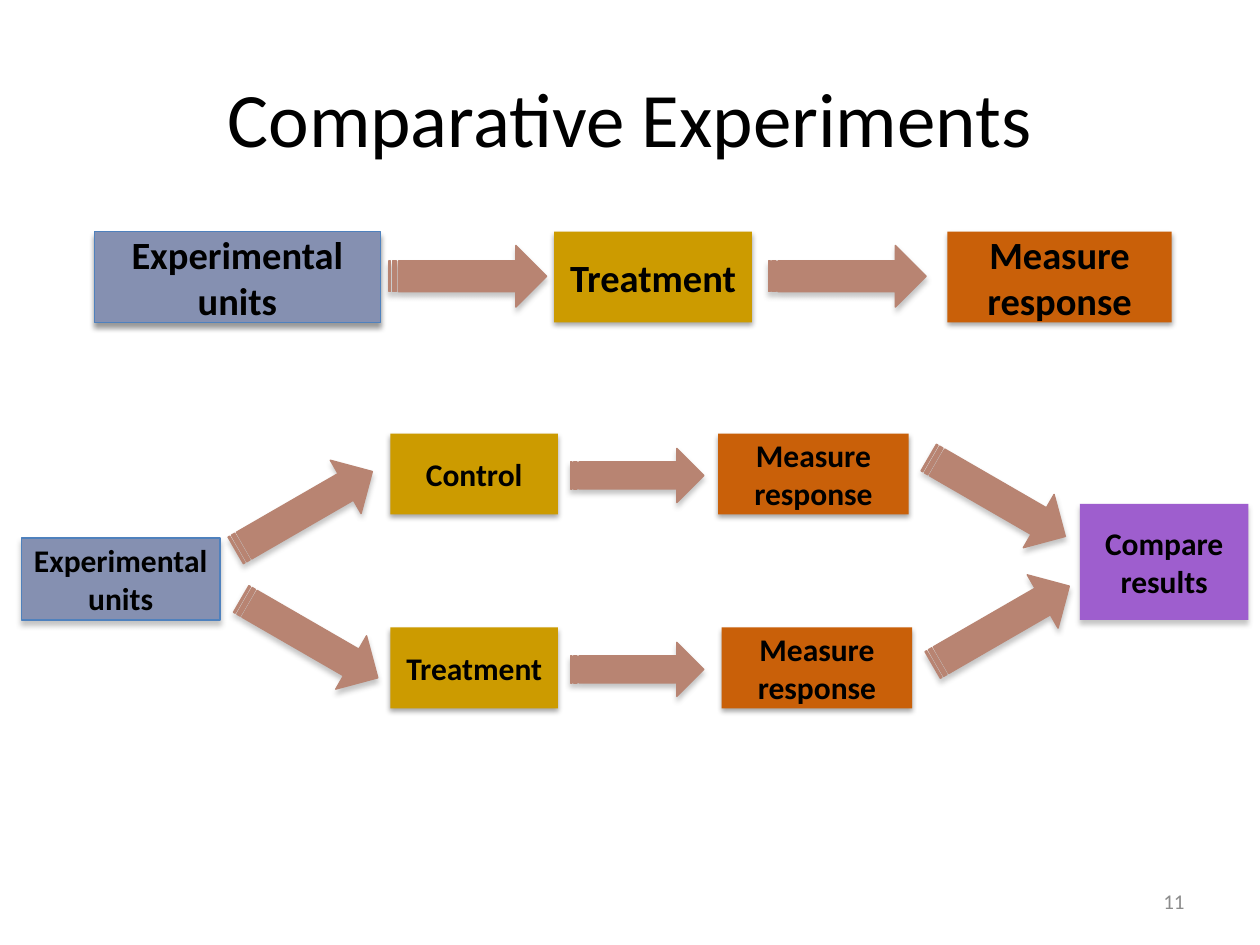
import pptx
import pptx.dml.color
import pptx.enum.shapes
import pptx.enum.text
import pptx.oxml
import pptx.oxml.ns
import pptx.util

Cm = pptx.util.Cm
Pt = pptx.util.Pt
KINDS = pptx.enum.shapes.MSO_SHAPE
ALIGN = pptx.enum.text.PP_ALIGN
BLUE, GOLD, RUST, PLUM, CLAY = "8590B1", "CC9B00", "C96009", "9E5ECE", "B88472"
EDGE = "4F81BD"
GRAY = ("808080", 45, 3, 2.4)
BLACK = ("000000", 35, 3.1, 1.8)
DEEP = ("000000", 40, 3.1, 3)


def color(code):
    """Return the colour for a hex string."""
    return pptx.dml.color.RGBColor.from_string(code)


def shade(shape, look):
    """Give a shape a soft shadow that falls straight down."""
    code, alpha, blur, dist = look
    shape.shadow.inherit = False
    effects = shape._element.spPr.find(pptx.oxml.ns.qn("a:effectLst"))
    effects.append(pptx.oxml.parse_xml(
        f'<a:outerShdw {pptx.oxml.ns.nsdecls("a")} blurRad="{Pt(blur)}" '
        f'dist="{Pt(dist)}" dir="5400000" rotWithShape="0">'
        f'<a:srgbClr val="{code}"><a:alpha val="{alpha * 1000}"/></a:srgbClr>'
        '</a:outerShdw>'))


def write(shape, words, size, code="000000", bold=False, align=ALIGN.CENTER):
    """Write one run of text, centred on the height of a shape."""
    frame = shape.text_frame
    frame.word_wrap = True
    frame.vertical_anchor = pptx.enum.text.MSO_ANCHOR.MIDDLE
    para = frame.paragraphs[0]
    para.alignment = align
    run = para.add_run()
    run.text = words
    run.font.name = "Calibri"
    run.font.size = Pt(size)
    run.font.bold = bold
    run.font.color.rgb = color(code)


def draw(slide, kind, box, fill, edge, look):
    """Add a filled preset shape with an optional edge."""
    shape = slide.shapes.add_shape(kind, *(Cm(n) for n in box))
    shape.fill.solid()
    shape.fill.fore_color.rgb = color(fill)
    if edge:
        shape.line.color.rgb = color(edge)
        shape.line.width = Pt(0.79)
    else:
        shape.line.fill.background()
    shade(shape, look)
    return shape


def step(slide, box, words, size, fill, edge=None, look=BLACK):
    """Add a labelled box for one step."""
    shape = draw(slide, KINDS.RECTANGLE, box, fill, edge, look)
    shape.text_frame.margin_left = shape.text_frame.margin_right = Cm(0.2)
    write(shape, words, size, bold=True)


def arrow(slide, left, top, wide=3.18, high=1.24, turn=0):
    """Add a striped arrow, turned by some degrees."""
    box = (left, top, wide, high)
    shape = draw(slide, KINDS.STRIPED_RIGHT_ARROW, box, CLAY, CLAY, GRAY)
    shape.rotation = turn


def label(slide, box, words, size, code, align):
    """Add plain text in a box."""
    shape = slide.shapes.add_textbox(*(Cm(n) for n in box))
    write(shape, words, size, code, align=align)


def single(slide, left, top):
    """Draw the chain with one treatment."""
    high = 1.83
    step(slide, (left, top, 5.77, high), "Experimental units", 22, BLUE, EDGE, DEEP)
    for shift in (5.94, 13.59):
        arrow(slide, left + shift, top + 0.28)
    step(slide, (left + 9.27, top, 3.99, high), "Treatment", 22, GOLD)
    step(slide, (left + 17.2, top, 4.52, high), "Measure response", 22, RUST)


def branch(slide, left, top, words, shift):
    """Draw one arm of the split, from group to response."""
    high = 1.63
    step(slide, (left, top, 3.38, high), words, 18, GOLD)
    arrow(slide, left + 3.63, top + 0.3, 2.69, 1.09)
    step(slide, (left + shift, top, 3.84, high), "Measure response", 18, RUST)


def compare(slide, left, top):
    """Draw the split into two arms and their comparison."""
    step(slide, (left, top + 2.11, 4.01, 1.65), "Experimental units", 18, BLUE, EDGE, GRAY)
    branch(slide, left + 7.44, top, "Control", 6.61)
    branch(slide, left + 7.44, top + 3.91, "Treatment", 6.68)
    for x, y, turn in ((4.11, 0.94, 330), (4.22, 3.51, 30),
                       (18.16, 3.25, 330), (18.08, 0.66, 30)):
        arrow(slide, left + x, top + y, turn=turn)
    step(slide, (left + 21.34, top + 1.42, 3.4, 2.34), "Compare results", 18, PLUM, look=GRAY)


def main():
    """Build the slide and save it."""
    deck = pptx.Presentation()
    deck.slide_width, deck.slide_height = Cm(25.4), Cm(19.05)
    slide = deck.slides.add_slide(deck.slide_layouts[6])
    label(slide, (1.27, 0.76, 22.86, 3.18), "Comparative Experiments", 44, "000000", ALIGN.CENTER)
    single(slide, 1.9, 4.67)
    compare(slide, 0.43, 8.74)
    label(slide, (18.2, 17.66, 5.93, 1.01), "11", 12, "8C8C8C", ALIGN.RIGHT)
    deck.save("out.pptx")


if __name__ == "__main__":
    main()
